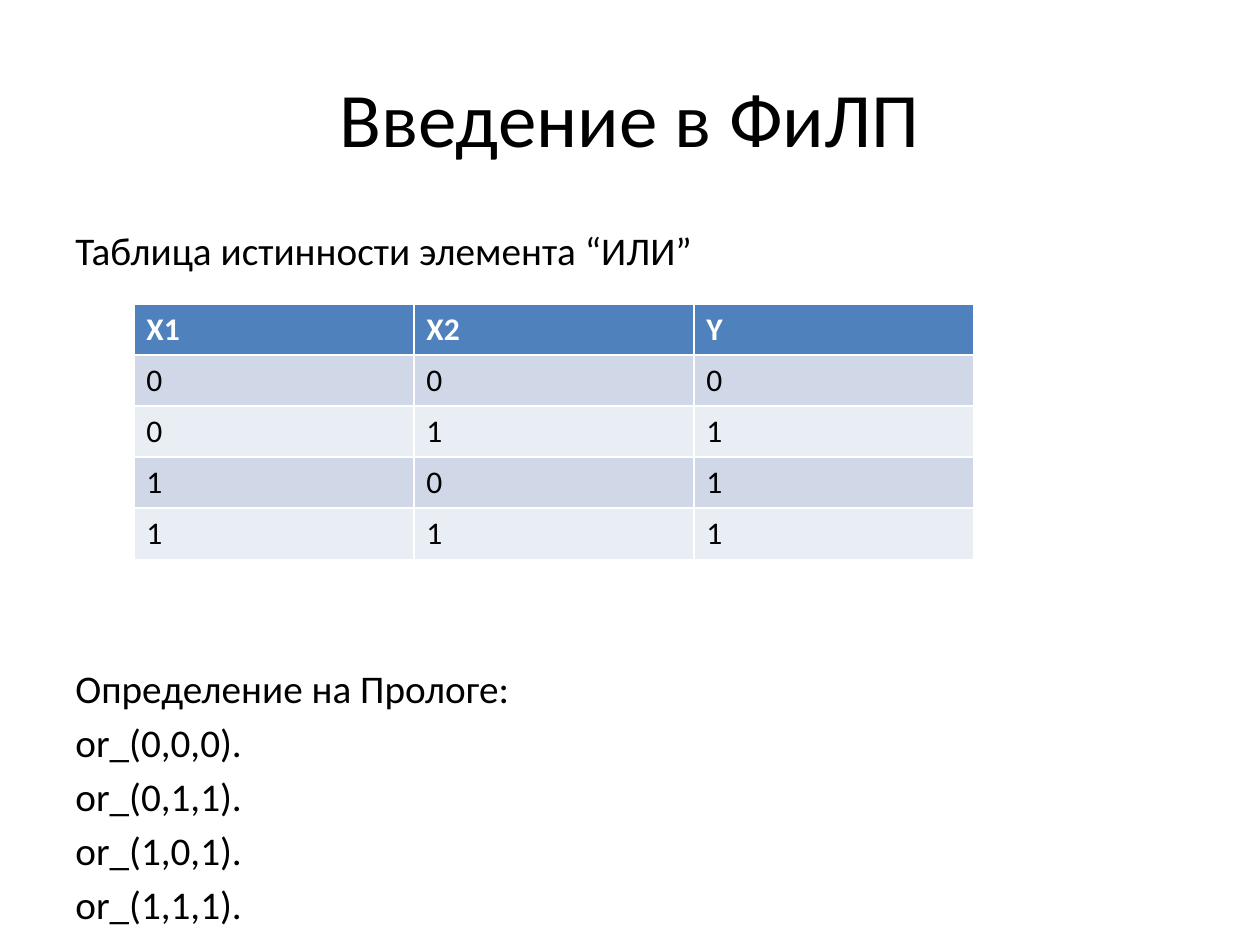
"""Build the slide with the truth table of the OR element and its Prolog definition."""
from pptx import Presentation
from pptx.dml.color import RGBColor
from pptx.enum.text import MSO_ANCHOR, PP_ALIGN
from pptx.util import Pt

CENTER = PP_ALIGN.CENTER
MIDDLE = MSO_ANCHOR.MIDDLE
TOP = MSO_ANCHOR.TOP
FONT = "Calibri"
COLORS = {
    "text": "000000",
    "header": "4F81BD",
    "header_text": "FFFFFF",
    "odd_row": "D0D8E8",
    "even_row": "E9EDF4",
}


def style(paragraph, size, color="text", bold=False):
    """Set the font of a whole paragraph."""
    paragraph.font.name = FONT
    paragraph.font.size = Pt(size)
    paragraph.font.bold = bold
    paragraph.font.color.rgb = RGBColor.from_string(COLORS[color])


deck = Presentation()
deck.slide_width, deck.slide_height = Pt(720), Pt(540)
page = deck.slides.add_slide(deck.slide_layouts[5])

title = page.shapes.title
title.left, title.top, title.width, title.height = Pt(36), Pt(21.6), Pt(648), Pt(90)
title.text_frame.text = "Введение в ФиЛП"
title.text_frame.vertical_anchor = MIDDLE
title.text_frame.paragraphs[0].alignment = CENTER
style(title.text_frame.paragraphs[0], 44)

truth = [(0, 0, 0), (0, 1, 1), (1, 0, 1), (1, 1, 1)]
lines = [("Таблица истинности элемента “ИЛИ”", 0), ("Определение на Прологе:", 223)]
lines += [(f"or_({x1},{x2},{y}).", 4) for x1, x2, y in truth]

body = page.shapes.add_textbox(Pt(36), Pt(126), Pt(648), Pt(356.4)).text_frame
body.word_wrap = True
body.vertical_anchor = TOP
for index, (text, gap) in enumerate(lines):
    para = body.add_paragraph() if index else body.paragraphs[0]
    para.text = text
    para.space_before = Pt(gap)
    style(para, 22.4)

rows = [("X1", "X2", "Y")] + truth
table = page.shapes.add_table(
    len(rows), 3, Pt(76.5), Pt(173.6), Pt(480), Pt(146)
).table
for row_index, values in enumerate(rows):
    is_header = row_index == 0
    band = "header" if is_header else "odd_row" if row_index % 2 else "even_row"
    for column_index, value in enumerate(values):
        cell = table.cell(row_index, column_index)
        cell.text = str(value)
        cell.fill.solid()
        cell.fill.fore_color.rgb = RGBColor.from_string(COLORS[band])
        style(
            cell.text_frame.paragraphs[0],
            18,
            "header_text" if is_header else "text",
            is_header,
        )

deck.save("out.pptx")
